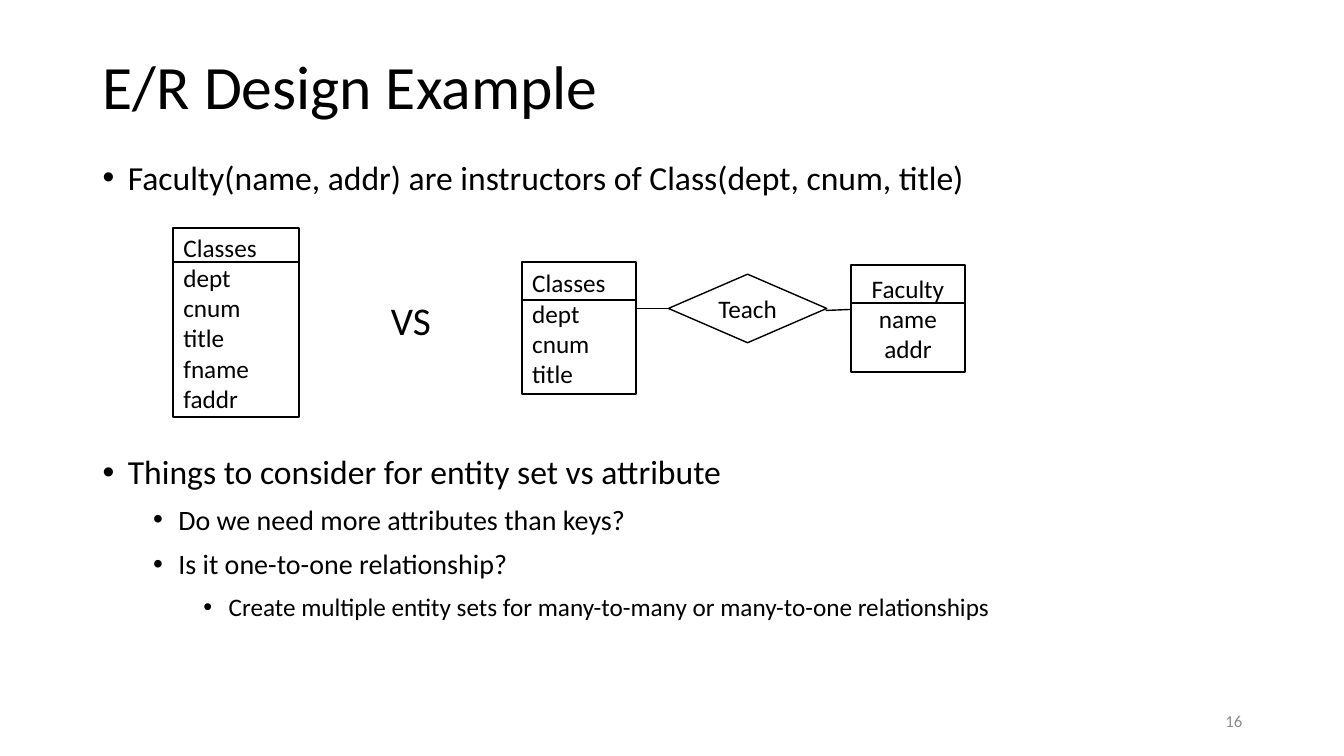
from lxml import etree
from pptx import Presentation
from pptx.dml.color import RGBColor
from pptx.enum.shapes import MSO_CONNECTOR, MSO_SHAPE
from pptx.enum.text import MSO_ANCHOR, PP_ALIGN
from pptx.oxml.ns import qn
from pptx.util import Inches, Pt

BLACK = RGBColor(0x00, 0x00, 0x00)
WHITE = RGBColor(0xFF, 0xFF, 0xFF)
GRAY = RGBColor(0x8C, 0x8C, 0x8C)
LEFT, CENTER, RIGHT = PP_ALIGN.LEFT, PP_ALIGN.CENTER, PP_ALIGN.RIGHT
TOP, MIDDLE = MSO_ANCHOR.TOP, MSO_ANCHOR.MIDDLE
RECTANGLE, DIAMOND = MSO_SHAPE.RECTANGLE, MSO_SHAPE.DIAMOND
STRAIGHT = MSO_CONNECTOR.STRAIGHT
FONT = "Calibri"
BULLET_SIZES = (24, 20, 18)


def write(paragraph, text, size=18, color=BLACK, align=LEFT, spacing=1.0):
    """Fill a paragraph; a newline becomes a line break."""
    paragraph.text = text
    paragraph.alignment = align
    paragraph.line_spacing = spacing
    for run in paragraph.runs:
        run.font.name = FONT
        run.font.size = Pt(size)
        run.font.color.rgb = color


class Diagram:
    """Draws the elements of one slide in a shared style."""

    def __init__(self, slide):
        self.slide = slide

    def title(self, text, left, top, width, height):
        title = self.slide.shapes.title
        title.left, title.top = Inches(left), Inches(top)
        title.width, title.height = Inches(width), Inches(height)
        title.text_frame.vertical_anchor = MIDDLE
        write(title.text_frame.paragraphs[0], text, size=44, spacing=0.9)

    def frame(self, left, top, width, height, anchor=TOP, wrap=True):
        box = self.slide.shapes.add_textbox(
            Inches(left), Inches(top), Inches(width), Inches(height))
        box.text_frame.word_wrap = wrap
        box.text_frame.vertical_anchor = anchor
        return box.text_frame

    def label(self, text, left, top, width, height, anchor=TOP, wrap=True, **style):
        frame = self.frame(left, top, width, height, anchor, wrap)
        write(frame.paragraphs[0], text, **style)

    def bullets(self, items, left, top, width, height):
        frame = self.frame(left, top, width, height)
        for index, (level, text) in enumerate(items):
            paragraph = frame.add_paragraph() if index else frame.paragraphs[0]
            write(paragraph, text, size=BULLET_SIZES[level], spacing=0.9)
            if index:
                paragraph.space_before = Pt(10)
            paragraph.level = level
            properties = paragraph._p.get_or_add_pPr()
            properties.set("marL", str(Inches(0.25 + 0.5 * level)))
            properties.set("indent", str(-Inches(0.25)))
            etree.SubElement(properties, qn("a:buFont")).set("typeface", "Arial")
            etree.SubElement(properties, qn("a:buChar")).set("char", "•")

    def node(self, kind, text, left, top, width, height, align=LEFT,
             fill=None, weight=1.5):
        node = self.slide.shapes.add_shape(
            kind, Inches(left), Inches(top), Inches(width), Inches(height))
        node.shadow.inherit = False
        if fill is None:
            node.fill.background()
        else:
            node.fill.solid()
            node.fill.fore_color.rgb = fill
        node.line.color.rgb = BLACK
        node.line.width = Pt(weight)
        node.text_frame.word_wrap = False
        node.text_frame.vertical_anchor = MIDDLE
        write(node.text_frame.paragraphs[0], text, align=align)

    def line(self, x1, y1, x2, y2, weight=1):
        line = self.slide.shapes.add_connector(
            STRAIGHT, Inches(x1), Inches(y1), Inches(x2), Inches(y2))
        line.line.color.rgb = BLACK
        line.line.width = Pt(weight)
        etree.SubElement(line._element.spPr, qn("a:effectLst"))

    def entity(self, name, attributes, left, top, width, height, header, align=LEFT):
        """An entity set: a box with a rule under its name."""
        self.node(RECTANGLE, "\n".join([name, *attributes]),
                  left, top, width, height, align)
        self.line(left, top + header, left + width, top + header, weight=1.5)


def main():
    presentation = Presentation()
    presentation.slide_width = Inches(13.33)
    presentation.slide_height = Inches(7.5)
    diagram = Diagram(presentation.slides.add_slide(presentation.slide_layouts[5]))

    # Title and bullets above and below the diagrams
    diagram.title("E/R Design Example", 0.92, 0.4, 11.5, 0.97)
    diagram.bullets(
        [(0, "Faculty(name, addr) are instructors of Class(dept, cnum, title)")],
        0.92, 1.55, 11.5, 0.5)
    diagram.bullets([
        (0, "Things to consider for entity set vs attribute"),
        (1, "Do we need more attributes than keys?"),
        (1, "Is it one-to-one relationship?"),
        (2, "Create multiple entity sets for many-to-many or many-to-one relationships"),
    ], 0.92, 4.47, 11.5, 2.29)

    # Single entity set
    class_attributes = ["dept", "cnum", "title"]
    diagram.entity("Classes", class_attributes + ["fname", "faddr"],
                   1.72, 2.26, 1.25, 1.88, header=0.34)
    diagram.label("VS", 3.78, 2.89, 0.6, 0.57, wrap=False, size=28)

    # Two entity sets joined by a relationship
    diagram.entity("Classes", class_attributes, 5.18, 2.6, 1.13, 1.31, header=0.38)
    diagram.entity("Faculty", ["name", "addr"], 8.44, 2.63, 1.13, 1.06,
                   header=0.38, align=CENTER)
    diagram.node(DIAMOND, "Teach", 6.63, 2.72, 1.57, 0.68, CENTER,
                 fill=WHITE, weight=1)
    diagram.line(6.31, 3.06, 6.63, 3.06)
    diagram.line(8.19, 3.08, 8.44, 3.07)

    # Slide number
    diagram.label("16", 9.42, 6.95, 3, 0.4, anchor=MIDDLE,
                  size=12, color=GRAY, align=RIGHT)

    presentation.save("out.pptx")


if __name__ == "__main__":
    main()
